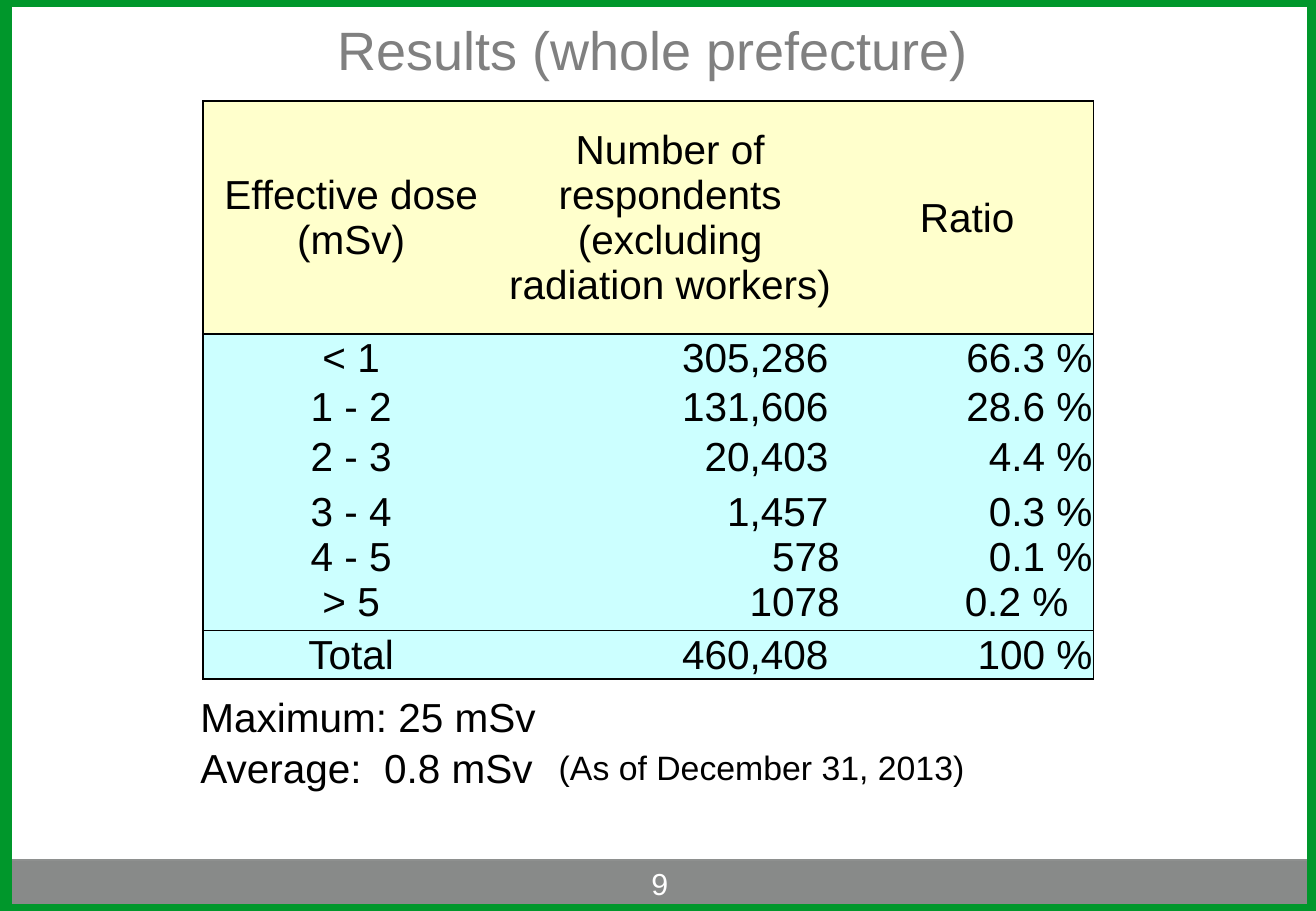
"""Build the slide with the table of effective doses for the whole prefecture."""
from dataclasses import dataclass

from lxml.etree import SubElement
from pptx import Presentation
from pptx.dml.color import RGBColor
from pptx.enum.shapes import MSO_SHAPE
from pptx.enum.text import MSO_ANCHOR, PP_ALIGN
from pptx.oxml.ns import qn
from pptx.util import Inches, Pt

BLACK, WHITE, GREEN = "000000", "FFFFFF", "00972B"
HEADER_FILL, BODY_FILL = "FFFFCC", "CCFFFF"
COLUMN_WIDTHS = (2.44, 2.81, 2.08)


@dataclass
class DoseRow:
    height: float
    cells: tuple[str, str, str]
    fill: str = BODY_FILL
    top: float = 0
    bottom: float = 0


@dataclass
class Note:
    box: tuple[float, float, float, float]
    text: str
    size: float
    color: str = BLACK
    align: PP_ALIGN = PP_ALIGN.LEFT
    anchor: MSO_ANCHOR = MSO_ANCHOR.TOP


DOSE_ROWS = (
    DoseRow(1.92, ("Effective dose (mSv)",
                   "Number of respondents (excluding radiation workers)", "Ratio"),
            HEADER_FILL, top=1, bottom=1),
    DoseRow(0.4, ("< 1", "305,286 ", "66.3 %"), top=1),
    DoseRow(0.4, ("1 - 2", "131,606 ", "28.6 %")),
    DoseRow(0.43, ("2 - 3", "20,403 ", "4.4 %")),
    DoseRow(1.21, ("3 - 4\n4 - 5\n> 5", "1,457 \n578\n1078", "0.3 %\n0.1 %\n0.2 %"),
            bottom=0.5),
    DoseRow(0.4, ("Total", "460,408 ", "100 %"), top=0.5, bottom=1),
)

NOTES = (
    Note((4.3, 7.03, 2.26, 0.48), "9", 18, WHITE, PP_ALIGN.CENTER, MSO_ANCHOR.MIDDLE),
    Note((1.55, 5.65, 3.13, 0.91), "Maximum: 25 mSv\nAverage:  0.8 mSv", 24),
    Note((4.5, 6.1, 3.83, 0.44), "(As of December 31, 2013)", 20),
)


def rgb(code: str) -> RGBColor:
    return RGBColor.from_string(code)


def write(frame, text: str, size: float, color: str, align: PP_ALIGN) -> None:
    frame.text = text
    for paragraph in frame.paragraphs:
        paragraph.alignment = align
        paragraph.font.name = "Arial"
        paragraph.font.size = Pt(size)
        paragraph.font.color.rgb = rgb(color)


def add_rectangle(slide, box, line_color: str, line_width: float, fill: str = ""):
    left, top, width, height = map(Inches, box)
    rectangle = slide.shapes.add_shape(MSO_SHAPE.RECTANGLE, left, top, width, height)
    rectangle.shadow.inherit = False
    if fill:
        rectangle.fill.solid()
        rectangle.fill.fore_color.rgb = rgb(fill)
    else:
        rectangle.fill.background()
    rectangle.line.color.rgb = rgb(line_color)
    rectangle.line.width = Pt(line_width)


def add_title(slide, text: str) -> None:
    title = slide.shapes.title
    title.left, title.top = Inches(0.04), Inches(0.03)
    title.width, title.height = Inches(10.67), Inches(0.75)
    title.text_frame.vertical_anchor = MSO_ANCHOR.MIDDLE
    write(title.text_frame, text, 32, "808080", PP_ALIGN.CENTER)


def add_note(slide, note: Note) -> None:
    frame = slide.shapes.add_textbox(*map(Inches, note.box)).text_frame
    frame.word_wrap = True
    frame.vertical_anchor = note.anchor
    write(frame, note.text, note.size, note.color, note.align)
    for paragraph in frame.paragraphs[1:]:
        paragraph.space_before = Pt(1)


def set_borders(cell, widths: dict[str, float]) -> None:
    properties = cell._tc.get_or_add_tcPr()
    for position, (side, width) in enumerate(widths.items()):
        border = SubElement(properties, qn(f"a:ln{side}"), w=str(Pt(width)))
        if width:
            solid = SubElement(border, qn("a:solidFill"))
            SubElement(solid, qn("a:srgbClr"), val=BLACK)
        else:
            SubElement(border, qn("a:noFill"))
        properties.insert(position, border)


def add_dose_table(slide):
    last = len(COLUMN_WIDTHS) - 1
    table = slide.shapes.add_table(len(DOSE_ROWS), len(COLUMN_WIDTHS), Inches(1.67),
                                   Inches(0.83), Inches(7.33), Inches(4.76)).table
    table.first_row = table.horz_banding = False
    for column, width in zip(table.columns, COLUMN_WIDTHS):
        column.width = Inches(width)
    for row, dose in zip(table.rows, DOSE_ROWS):
        row.height = Inches(dose.height)
        for index, (cell, text) in enumerate(zip(row.cells, dose.cells)):
            centred = index == 0 or dose.fill == HEADER_FILL
            cell.vertical_anchor = MSO_ANCHOR.MIDDLE
            cell.margin_left = cell.margin_right = cell.margin_top = Inches(0.01)
            cell.margin_bottom = 0
            cell.fill.solid()
            cell.fill.fore_color.rgb = rgb(dose.fill)
            write(cell.text_frame, text, 24, BLACK,
                  PP_ALIGN.CENTER if centred else PP_ALIGN.RIGHT)
            set_borders(cell, {"L": int(index == 0), "R": int(index == last),
                               "T": dose.top, "B": dose.bottom})
    return table


def indent_highest_ratio(table) -> None:
    highest_ratio = table.cell(4, 2).text_frame.paragraphs[-1]
    highest_ratio.alignment = PP_ALIGN.LEFT
    properties = highest_ratio._p.get_or_add_pPr()
    properties.set("marL", str(Inches(1.01)))
    properties.set("indent", "0")


def main() -> None:
    presentation = Presentation()
    presentation.slide_width, presentation.slide_height = Inches(10.83), Inches(7.5)
    slide = presentation.slides.add_slide(presentation.slide_layouts[5])
    add_rectangle(slide, (0, 7.08, 10.82, 0.42), "8E908F", 0.75, "888A89")
    add_rectangle(slide, (0.04, 0, 10.77, 7.5), GREEN, 8)
    add_title(slide, "Results (whole prefecture)")
    indent_highest_ratio(add_dose_table(slide))
    for note in NOTES:
        add_note(slide, note)
    presentation.save("out.pptx")


if __name__ == "__main__":
    main()
